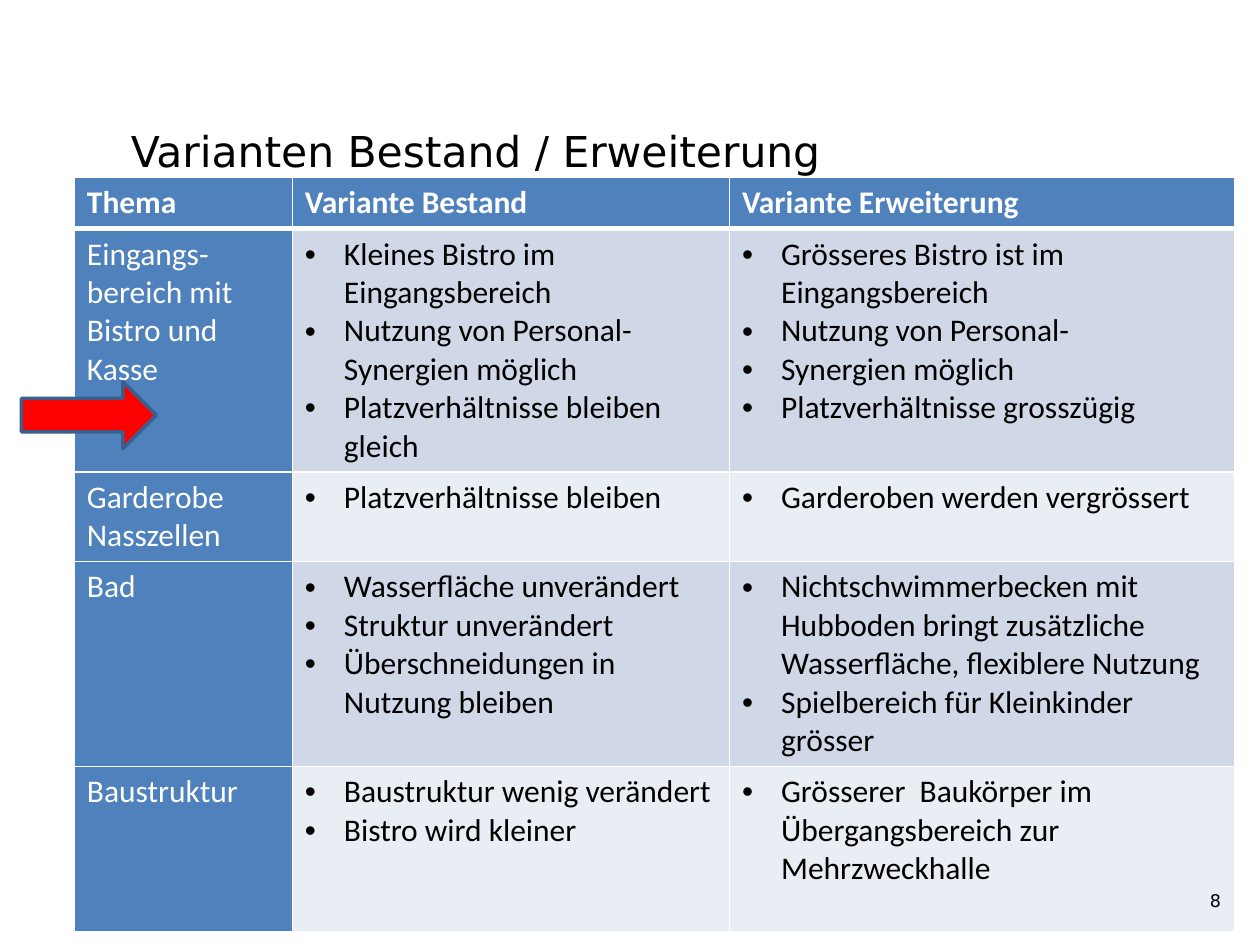
from lxml.etree import SubElement
from pptx import Presentation
from pptx.dml.color import RGBColor
from pptx.enum.shapes import MSO_SHAPE
from pptx.enum.text import MSO_ANCHOR, PP_ALIGN
from pptx.oxml.ns import qn
from pptx.util import Inches, Pt

COLORS = {
    "head": "4F81BD", "odd": "D0D8E8", "even": "E9EDF4", "white": "FFFFFF",
    "black": "000000", "arrow": "FF0000", "outline": "3A5F8C",
}
COLUMNS = [1.73, 3.47, 4.01]
ROW_HEIGHTS = [0.38, 1.82, 0.67, 1.53, 1.31]
INDENT = 0.31
HEADERS = ["Thema", "Variante Bestand", "Variante Erweiterung"]
TOPICS = [
    (["Eingangs-bereich mit", "Bistro und", "Kasse"],
     ["Kleines Bistro im Eingangsbereich",
      "Nutzung von Personal- Synergien möglich",
      "Platzverhältnisse bleiben gleich"],
     ["Grösseres Bistro ist im Eingangsbereich",
      "Nutzung von Personal-",
      "Synergien möglich",
      "Platzverhältnisse grosszügig"]),
    (["Garderobe Nasszellen"],
     ["Platzverhältnisse bleiben"],
     ["Garderoben werden vergrössert"]),
    (["Bad"],
     ["Wasserfläche unverändert",
      "Struktur unverändert",
      "Überschneidungen in Nutzung bleiben"],
     ["Nichtschwimmerbecken mit  Hubboden bringt zusätzliche "
      "Wasserfläche, flexiblere Nutzung",
      "Spielbereich für Kleinkinder grösser"]),
    (["Baustruktur"],
     ["Baustruktur wenig verändert", "Bistro wird kleiner"],
     ["Grösserer  Baukörper im Übergangsbereich zur Mehrzweckhalle"]),
]


def rgb(name):
    return RGBColor.from_string(COLORS[name])


def add_bullet(p):
    pPr = p._p.get_or_add_pPr()
    pPr.set("marL", str(Inches(INDENT)))
    pPr.set("indent", str(-Inches(INDENT)))
    SubElement(pPr, qn("a:buFont"), typeface="Arial")
    SubElement(pPr, qn("a:buChar"), char="•")


def write(tf, lines, size=18, font="Calibri", color="black", bold=False,
          bullet=False, align=PP_ALIGN.LEFT):
    for i, line in enumerate(lines):
        p = tf.paragraphs[0] if i == 0 else tf.add_paragraph()
        p.alignment = align
        if bullet:
            add_bullet(p)
        r = p.add_run()
        r.text = line
        r.font.size = Pt(size)
        r.font.name = font
        r.font.bold = bold
        r.font.color.rgb = rgb(color)


def add_text(s, box, text, anchor, **fmt):
    tf = s.shapes.add_textbox(*map(Inches, box)).text_frame
    tf.word_wrap = True
    tf.vertical_anchor = anchor
    tf.margin_top = tf.margin_bottom = 0
    write(tf, [text], font="DejaVu Sans", **fmt)


def style_cell(cell, fill, bottom=1):
    tcPr = cell._tc.get_or_add_tcPr()
    for side, width in (("L", 1), ("R", 1), ("T", 1), ("B", bottom)):
        ln = SubElement(tcPr, qn(f"a:ln{side}"), w=str(Pt(width)))
        SubElement(SubElement(ln, qn("a:solidFill")), qn("a:srgbClr"),
                   val=COLORS["white"])
    cell.fill.solid()
    cell.fill.fore_color.rgb = rgb(fill)


def add_comparison(s, left, top):
    frame = s.shapes.add_table(
        len(ROW_HEIGHTS), len(COLUMNS), Inches(left), Inches(top),
        Inches(sum(COLUMNS)), Inches(sum(ROW_HEIGHTS)))
    table = frame.table
    for column, width in zip(table.columns, COLUMNS):
        column.width = Inches(width)
    for row, height in zip(table.rows, ROW_HEIGHTS):
        row.height = Inches(height)
    for c, header in enumerate(HEADERS):
        cell = table.cell(0, c)
        style_cell(cell, "head", bottom=3)
        write(cell.text_frame, [header], color="white", bold=True)
    for r, topic in enumerate(TOPICS, start=1):
        band = "odd" if r % 2 else "even"
        for c, lines in enumerate(topic):
            cell = table.cell(r, c)
            style_cell(cell, band if c else "head")
            write(cell.text_frame, lines, color="black" if c else "white",
                  bullet=c > 0)


def add_arrow(s, box):
    sp = s.shapes.add_shape(MSO_SHAPE.RIGHT_ARROW, *map(Inches, box))
    sp.shadow.inherit = False
    sp.fill.solid()
    sp.fill.fore_color.rgb = rgb("arrow")
    sp.line.color.rgb = rgb("outline")
    sp.line.width = Pt(2)


def main():
    prs = Presentation()
    prs.slide_width, prs.slide_height = Inches(10), Inches(7.5)
    s = prs.slides.add_slide(prs.slide_layouts[6])
    add_comparison(s, 0.59, 1.41)
    add_text(s, (0.94, 0.72, 8.86, 0.68), "Varianten Bestand / Erweiterung",
             MSO_ANCHOR.BOTTOM, size=24.3)
    add_text(s, (7.46, 6.95, 2.33, 0.4), "8", MSO_ANCHOR.MIDDLE,
             size=10, align=PP_ALIGN.RIGHT)
    add_arrow(s, (0.17, 3.03, 1.07, 0.53))
    prs.save("out.pptx")


if __name__ == "__main__":
    main()
